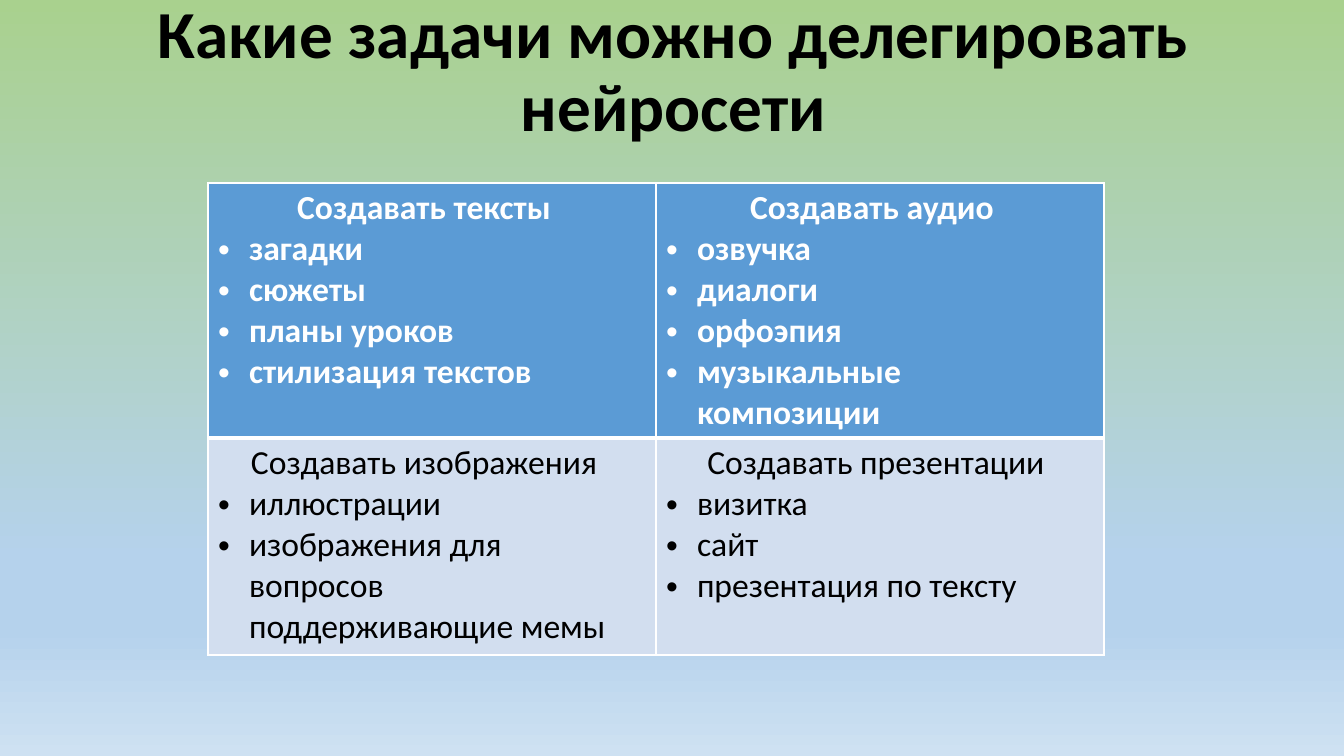
from dataclasses import dataclass

from lxml.etree import SubElement
from pptx import Presentation
from pptx.dml.color import RGBColor
from pptx.enum.text import MSO_ANCHOR as Anchor, PP_ALIGN as Align
from pptx.oxml.ns import qn
from pptx.util import Emu, Pt


@dataclass(frozen=True)
class Theme:
    font: str = "Calibri"
    title_size: int = 48
    body_size: int = 24
    dark: str = "000000"
    light: str = "FFFFFF"
    row_fills: tuple = ("5B9BD5", "D2DEEF")
    background: tuple = ((0, "A9D18E"), (74, "B5D2EC"), (83, "B5D2EC"), (100, "CEE1F2"))
    thin: int = 1
    thick: int = 3


def px(length):
    return Emu(round(length * 914400 / 100.8))


class SlideBuilder:
    def __init__(self, presentation, theme):
        self.theme = theme
        self.slide = presentation.slides.add_slide(presentation.slide_layouts[6])

    def background(self):
        fill = self.slide.background.fill
        fill.gradient()
        fill.gradient_angle = 270
        stops = next(self.slide.element.iter(qn("a:gsLst")))
        for stop in list(stops):
            stops.remove(stop)
        for position, color in self.theme.background:
            stop = SubElement(stops, qn("a:gs"), pos=str(position * 1000))
            SubElement(stop, qn("a:srgbClr"), val=color)

    def run(self, paragraph, text, size, color, bold):
        run = paragraph.add_run()
        run.text = text
        font = run.font
        font.name, font.size, font.bold = self.theme.font, Pt(size), bold
        font.color.rgb = RGBColor.from_string(color)

    def title(self, text, left, top, width, height):
        shape = self.slide.shapes.add_textbox(px(left), px(top), px(width), px(height))
        frame = shape.text_frame
        frame.word_wrap = True
        frame.vertical_anchor = Anchor.MIDDLE
        paragraph = frame.paragraphs[0]
        paragraph.alignment = Align.CENTER
        paragraph.line_spacing = 0.9
        self.run(paragraph, text, self.theme.title_size, self.theme.dark, True)

    def table(self, rows, left, top, column_width, row_heights):
        columns = len(rows[0])
        table = self.slide.shapes.add_table(
            len(rows), columns, px(left), px(top),
            px(column_width * columns), px(sum(row_heights))).table
        table.first_row = table.horz_banding = False
        for column in table.columns:
            column.width = px(column_width)
        for index, height in enumerate(row_heights):
            table.rows[index].height = px(height)
            for column, content in enumerate(rows[index]):
                self.cell(table.cell(index, column), content, index == 0)

    def cell(self, cell, content, is_header):
        theme = self.theme
        heading, right_indent, items = content
        color = theme.light if is_header else theme.dark
        # Borders come before the fill in the cell properties
        self.borders(cell, "T" if not is_header else "B")
        cell.fill.solid()
        cell.fill.fore_color.rgb = RGBColor.from_string(theme.row_fills[0 if is_header else 1])
        # Heading, nudged left by its right indent
        frame = cell.text_frame
        paragraph = frame.paragraphs[0]
        paragraph.alignment = Align.CENTER
        paragraph._p.get_or_add_pPr().set("marR", str(px(right_indent)))
        self.run(paragraph, heading, theme.body_size, color, is_header)
        # Bulleted items
        for item in items:
            paragraph = frame.add_paragraph()
            self.bullet(paragraph, 31)
            self.run(paragraph, item, theme.body_size, color, is_header)

    def bullet(self, paragraph, indent):
        properties = paragraph._p.get_or_add_pPr()
        properties.set("marL", str(px(indent)))
        properties.set("indent", str(-px(indent)))
        SubElement(properties, qn("a:buFont"), typeface="Arial")
        SubElement(properties, qn("a:buChar"), char="•")

    def borders(self, cell, thick_side):
        properties = cell._tc.get_or_add_tcPr()
        for side in "LRTB":
            width = self.theme.thick if side == thick_side else self.theme.thin
            line = SubElement(properties, qn(f"a:ln{side}"), w=str(Pt(width)))
            fill = SubElement(line, qn("a:solidFill"))
            SubElement(fill, qn("a:srgbClr"), val=self.theme.light)


# Each cell: heading, right indent of the heading, items
TASKS = (
    (("Создавать тексты", 16,
      ("загадки", "сюжеты", "планы уроков", "стилизация текстов")),
     ("Создавать аудио", 16,
      ("озвучка", "диалоги", "орфоэпия", "музыкальные композиции"))),
    (("Создавать изображения", 16,
      ("иллюстрации", "изображения для вопросов поддерживающие мемы")),
     ("Создавать презентации", 8,
      ("визитка", "сайт", "презентация по тексту"))),
)


def main():
    presentation = Presentation()
    presentation.slide_width, presentation.slide_height = px(1344), px(756)
    builder = SlideBuilder(presentation, Theme())
    builder.background()
    builder.title("Какие задачи можно делегировать нейросети", 94, 0, 1159, 146)
    builder.table(TASKS, 208, 183, 448, (255, 217))
    presentation.save("out.pptx")


if __name__ == "__main__":
    main()
